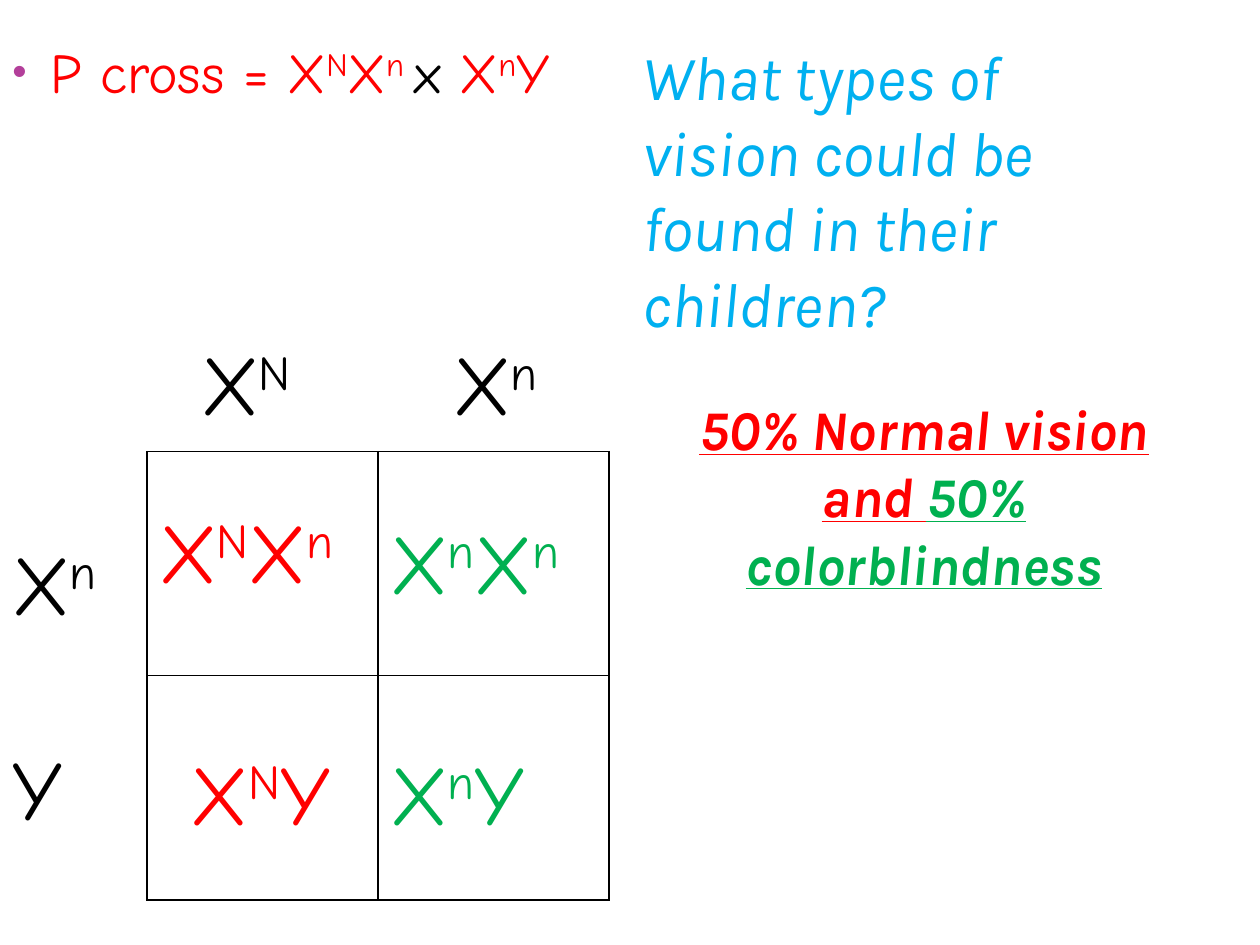
from pptx import Presentation
from pptx.dml.color import RGBColor
from pptx.enum.shapes import MSO_SHAPE as Preset
from pptx.enum.text import MSO_ANCHOR as Anchor, MSO_AUTO_SIZE as AutoSize, PP_ALIGN as Align
from pptx.oxml.ns import qn
from pptx.util import Inches, Pt
from lxml.etree import SubElement

BLACK = RGBColor(0, 0, 0)
WHITE = RGBColor(255, 255, 255)
RED = RGBColor(255, 0, 0)
GREEN = RGBColor(0, 176, 80)
BLUE = RGBColor(0, 176, 240)
PURPLE = RGBColor(179, 63, 154)
GENETIC_FONT = "Comic Neue"
PROSE_FONT = "Karla"
UNIT = Inches(1) // 12


def grid(*counts):
    return [round(count * UNIT) for count in counts]


def write(paragraph, text, color=BLACK, size=48, font=GENETIC_FONT,
          bold=False, italic=False, underline=False):
    for index, piece in enumerate(text.split("^")):
        if not piece:
            continue
        run = paragraph.add_run()
        run.text = piece
        run.font.size = Pt(size)
        run.font.name = font
        run.font.color.rgb = color
        run.font.bold = bold
        run.font.italic = italic
        run.font.underline = underline
        if index % 2:
            run.font._element.set("baseline", "30000")


def add_box(slide, column, row, columns, rows):
    frame = slide.shapes.add_textbox(*grid(column, row, columns, rows)).text_frame
    frame.word_wrap = True
    frame.auto_size = AutoSize.SHAPE_TO_FIT_TEXT
    return frame


def add_label(slide, area, text, **style):
    frame = add_box(slide, *area)
    write(frame.paragraphs[0], text, **style)
    return frame


def add_bullet(paragraph, indent):
    properties = paragraph._p.get_or_add_pPr()
    properties.set("marL", str(indent))
    properties.set("indent", str(-indent))
    color = SubElement(properties, qn("a:buClr"))
    SubElement(color, qn("a:srgbClr"), val=str(PURPLE))
    SubElement(properties, qn("a:buSzPct"), val="73000")
    SubElement(properties, qn("a:buFont"), typeface="Arial")
    SubElement(properties, qn("a:buChar"), char="•")


def add_tab_stop(paragraph, position):
    stops = SubElement(paragraph._p.get_or_add_pPr(), qn("a:tabLst"))
    SubElement(stops, qn("a:tab"), pos=str(position), algn="l")


def add_cross(slide):
    cross = add_box(slide, 0, 3, 106, 8).paragraphs[0]
    add_bullet(cross, Inches(0.3))
    for text, color in (("P cross = X^N^X^n ^", RED), ("x ", BLACK), ("X^n^Y", RED)):
        write(cross, text, color=color, size=32)


def outline_cell(cell):
    properties = cell._tc.get_or_add_tcPr()
    for side in ("lnL", "lnR", "lnT", "lnB"):
        border = SubElement(properties, qn(f"a:{side}"), w=str(Pt(1)))
        fill = SubElement(border, qn("a:solidFill"))
        SubElement(fill, qn("a:srgbClr"), val=str(BLACK))
    cell.fill.background()


def add_punnett_square(slide):
    square = slide.shapes.add_table(2, 2, *grid(14, 43, 44, 42.7)).table
    square.first_row = square.horz_banding = False
    for cell in square.iter_cells():
        outline_cell(cell)


def add_gametes(slide):
    mother = add_box(slide, 18, 31, 39, 11).paragraphs[0]
    add_tab_stop(mother, Inches(2))
    write(mother, "X^N\t^X^n")
    father = add_label(slide, (0, 50, 14, 30), "X^n")
    y_row = father.add_paragraph()
    y_row.space_before = Pt(60)
    write(y_row, "Y")


def add_answer(slide):
    panel = slide.shapes.add_shape(Preset.RECTANGLE, *grid(61, 37, 54, 20.6))
    panel.shadow.inherit = False
    panel.fill.solid()
    panel.fill.fore_color.rgb = WHITE
    panel.line.fill.background()
    frame = panel.text_frame
    frame.word_wrap = True
    frame.vertical_anchor = Anchor.TOP
    style = dict(size=32, font=PROSE_FONT, bold=True, italic=True, underline=True)
    normal, colorblind = frame.paragraphs[0], frame.add_paragraph()
    normal.alignment = colorblind.alignment = Align.CENTER
    write(normal, "50% Normal vision", color=RED, **style)
    write(colorblind, "and ", color=RED, **style)
    write(colorblind, "50% colorblindness", color=GREEN, **style)


def main():
    deck = Presentation()
    deck.slide_width, deck.slide_height = grid(120, 90)
    slide = deck.slides.add_slide(deck.slide_layouts[6])
    add_cross(slide)
    add_punnett_square(slide)
    add_gametes(slide)
    offspring = (
        ((14, 47, 23, 11), "X^N^X^n", RED),
        ((17, 70, 18, 11), "X^N^Y", RED),
        ((36, 48, 23, 11), "X^n^X^n", GREEN),
        ((36, 70, 22, 11), "X^n^Y", GREEN),
    )
    for area, genotype, color in offspring:
        add_label(slide, area, genotype, color=color)
    add_label(slide, (60, 3, 47, 30),
              "What types of vision could be found in their children?",
              color=BLUE, size=36, font=PROSE_FONT, italic=True)
    add_answer(slide)
    deck.save("out.pptx")


if __name__ == "__main__":
    main()
